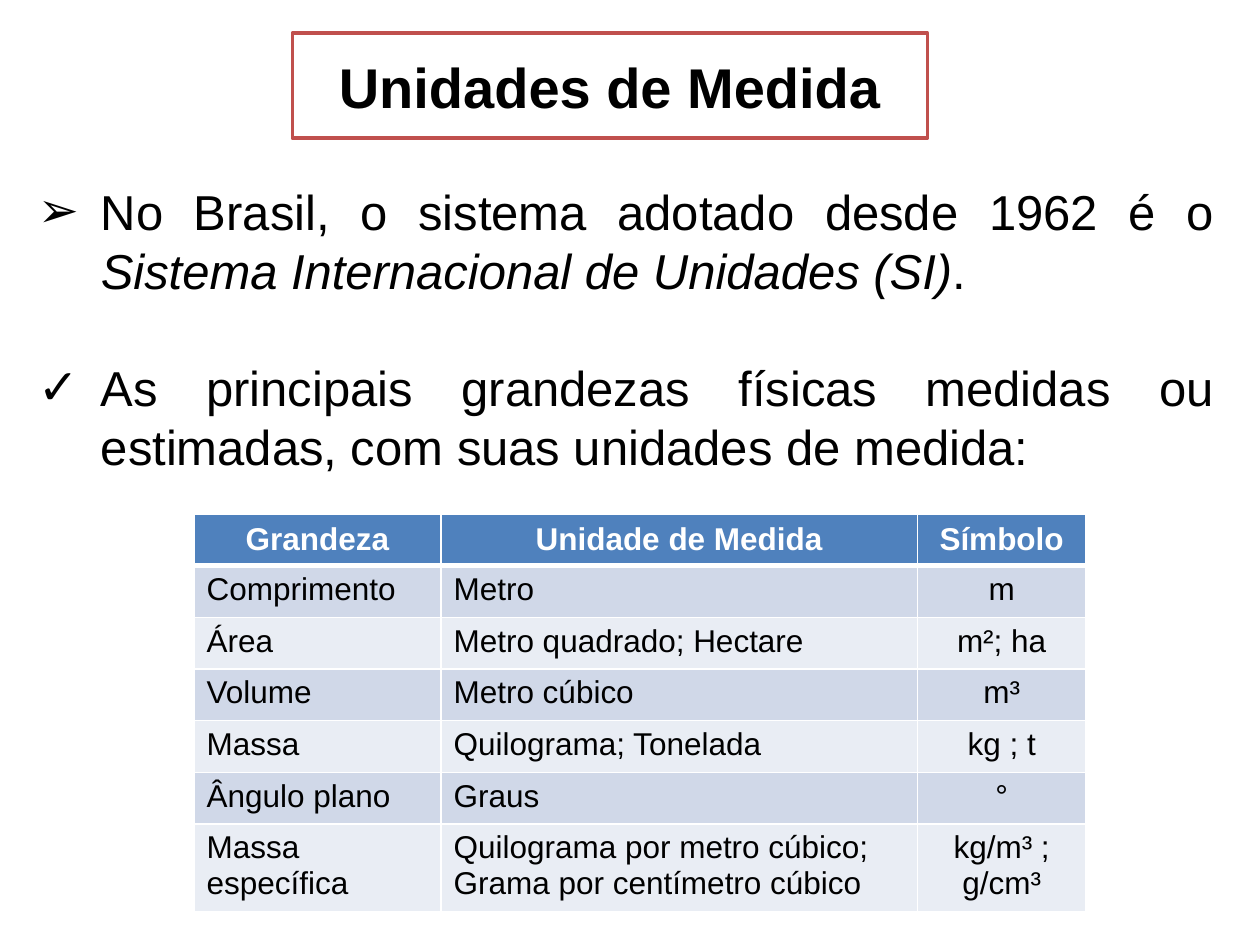
from dataclasses import dataclass

from lxml.etree import SubElement
from pptx import Presentation
from pptx.dml.color import RGBColor
from pptx.enum.text import MSO_ANCHOR, MSO_AUTO_SIZE, PP_ALIGN
from pptx.oxml.ns import qn
from pptx.util import Inches, Pt


@dataclass(frozen=True)
class Theme:
    font: str = "Arial"
    title: int = 32
    body: int = 28
    cell: int = 18
    text: str = "000000"
    paper: str = "FFFFFF"
    frame: str = "C0504D"
    header: str = "4F81BD"
    bands: tuple = ("D0D8E8", "E9EDF4")


T = Theme()

prs = Presentation()
prs.slide_width, prs.slide_height = Inches(10), Inches(7.5)
U = prs.slide_width // 100  # grid of 100 columns by 75 rows


def place(sp, *cells):
    """Put a shape at left, top, width, height, counted in grid units."""
    sp.left, sp.top, sp.width, sp.height = (round(c * U) for c in cells)


def add_run(p, text, size, color=T.text, bold=False, italic=False):
    r = p.add_run()
    r.text = text
    r.font.name, r.font.size = T.font, Pt(size)
    r.font.bold, r.font.italic = bold, italic
    r.font.color.rgb = RGBColor.from_string(color)


s = prs.slides.add_slide(prs.slide_layouts.get_by_name("Two Content"))
title, *bodies = list(s.placeholders)[:3]

# Title in a red frame
place(title, 23.2, 3.6, 50.4, 6.4)
title.fill.solid()
title.fill.fore_color.rgb = RGBColor.from_string(T.paper)
title.line.color.rgb = RGBColor.from_string(T.frame)
title.line.width = Pt(2)
title.text_frame.auto_size = MSO_AUTO_SIZE.SHAPE_TO_FIT_TEXT
p = title.text_frame.paragraphs[0]
p.alignment = PP_ALIGN.CENTER
add_run(p, "Unidades de Medida", T.title, bold=True)

# Two bulleted statements: (bullet, top row, [(text, italic)])
statements = [
    ("➢", 13.9, [
        ("No Brasil, o sistema adotado desde 1962 é o ", False),
        ("Sistema Internacional de Unidades (SI)", True),
        (".", False),
    ]),
    ("✓", 27.9, [
        ("As principais grandezas físicas medidas ou estimadas, "
         "com suas unidades de medida:", False),
    ]),
]
for sp, (bullet, top, runs) in zip(bodies, statements):
    place(sp, 2, top, 95.3, 10.4)
    tf = sp.text_frame
    tf.word_wrap = True
    tf.auto_size = MSO_AUTO_SIZE.SHAPE_TO_FIT_TEXT
    p = tf.paragraphs[0]
    p.alignment = PP_ALIGN.JUSTIFY
    p.space_before = Pt(0)
    pPr = p._p.get_or_add_pPr()
    pPr.set("marL", str(5 * U))
    pPr.set("indent", str(-5 * U))
    SubElement(pPr, qn("a:buFont"), typeface=T.font)
    SubElement(pPr, qn("a:buChar"), char=bullet)
    for text, italic in runs:
        add_run(p, text, T.body, italic=italic)

# Table of quantities and units
rows = [
    ("Grandeza", "Unidade de Medida", "Símbolo"),
    ("Comprimento", "Metro", "m"),
    ("Área", "Metro quadrado; Hectare", "m²; ha"),
    ("Volume", "Metro cúbico", "m³"),
    ("Massa", "Quilograma; Tonelada", "kg ; t"),
    ("Ângulo plano", "Graus", "°"),
    ("Massa específica",
     "Quilograma por metro cúbico; Grama por centímetro cúbico",
     "kg/m³ ; g/cm³"),
]
frame = s.shapes.add_table(len(rows), 3, 0, 0, U, U)
table = frame.table
table.horz_banding = False
for column, width in zip(table.columns, (19.6, 37.8, 13.4)):
    column.width = round(width * U)
for row in table.rows:
    row.height = round(4.1 * U)
place(frame, 15.4, 40.8, 70.8, 31.3)

for i, texts in enumerate(rows):
    is_header = i == 0
    for j, text in enumerate(texts):
        cell = table.cell(i, j)
        tcPr = cell._tc.get_or_add_tcPr()
        for side in "LRTB":
            thick = (i, side) in ((0, "B"), (1, "T"))
            ln = SubElement(tcPr, qn(f"a:ln{side}"), w=str(Pt(3 if thick else 1)))
            SubElement(SubElement(ln, qn("a:solidFill")), qn("a:srgbClr"), val=T.paper)
        cell.fill.solid()
        cell.fill.fore_color.rgb = RGBColor.from_string(
            T.header if is_header else T.bands[(i - 1) % 2])
        cell.vertical_anchor = MSO_ANCHOR.MIDDLE if is_header else MSO_ANCHOR.TOP
        p = cell.text_frame.paragraphs[0]
        p.alignment = PP_ALIGN.CENTER if is_header or j == 2 else PP_ALIGN.LEFT
        add_run(p, text, T.cell, T.paper if is_header else T.text, bold=is_header)

# The layout's date, footer and number are not copied to the slide
prs.save("out.pptx")
